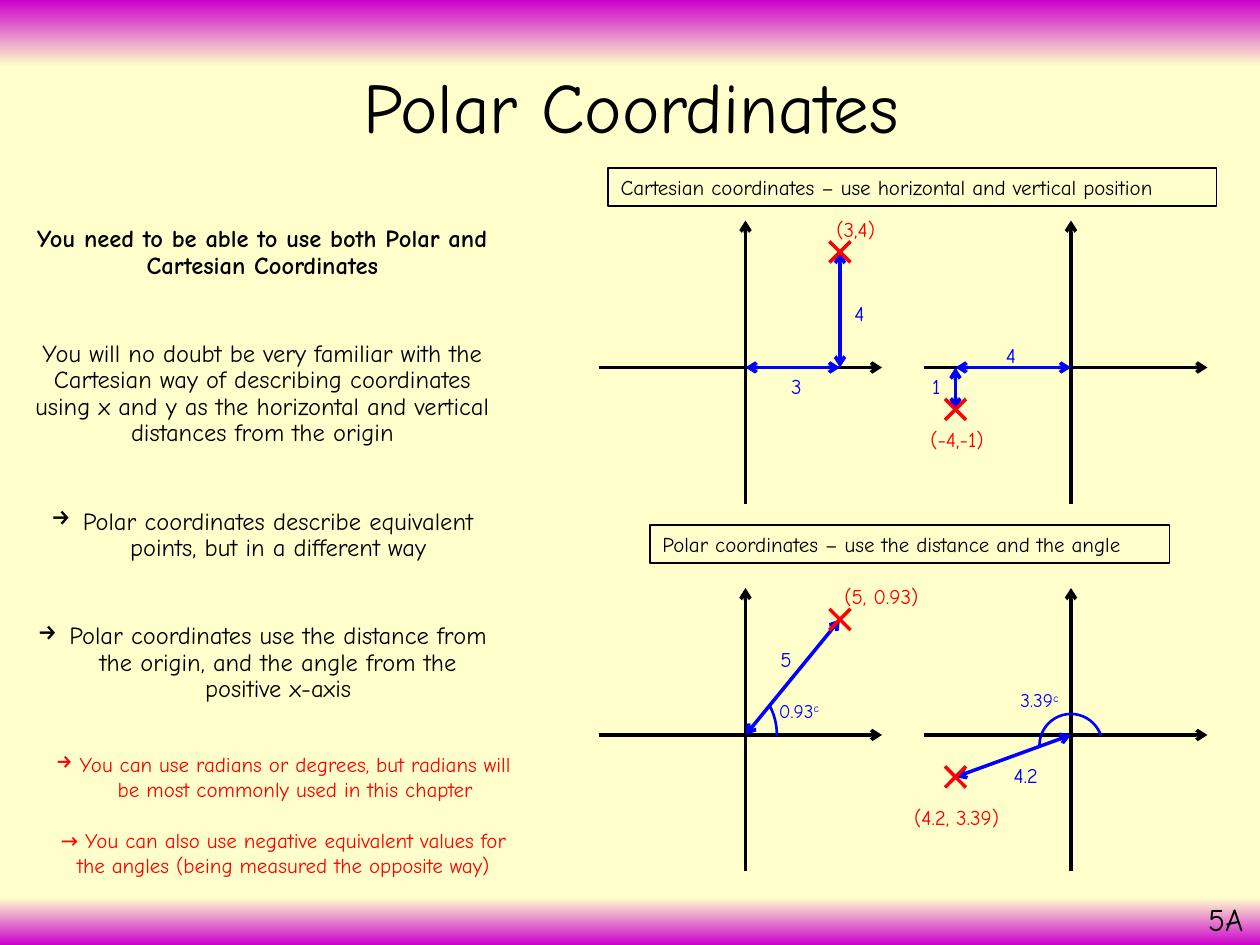
from copy import deepcopy
from pptx import Presentation
from pptx.dml.color import RGBColor
from pptx.enum.shapes import MSO_CONNECTOR as Link, MSO_SHAPE as Kind
from pptx.enum.text import MSO_ANCHOR as Anchor, MSO_AUTO_SIZE as Fit, PP_ALIGN as Align
from pptx.oxml.ns import qn
from pptx.util import Pt
from lxml.etree import SubElement as Sub

BLACK = RGBColor(0x00, 0x00, 0x00)
BLUE = RGBColor(0x00, 0x00, 0xFF)
RED = RGBColor(0xFF, 0x00, 0x00)
PURPLE = RGBColor(0xCC, 0x00, 0xCC)
CREAM = RGBColor(0xFF, 0xFF, 0xCC)


class Board:
    font = "Comic Neue"
    stroke = 2

    def __init__(self, slide):
        self.slide = slide
        self.shapes = slide.shapes

    def shade(self, stops):
        """Fill the background from top to bottom."""
        fill = self.slide.background.fill
        fill.gradient()
        fill.gradient_angle = 270
        items = self.slide.element.find(".//" + qn("a:gsLst"))
        while len(items) < len(stops):
            items.append(deepcopy(items[0]))
        for stop, (place, color) in zip(fill.gradient_stops, stops):
            stop.position = place
            stop.color.rgb = color

    def run(self, para, words, size, color, bold=False, raised=False):
        run = para.add_run()
        run.text = words
        font = run.font
        font.name, font.size, font.bold = self.font, Pt(size), bold
        font.color.rgb = color
        if raised:
            font._element.set("baseline", "30000")

    def bullet(self, para, indent):
        props = para._p.get_or_add_pPr()
        props.set("marL", str(Pt(indent)))
        props.set("indent", str(-Pt(indent)))
        Sub(props, qn("a:buChar")).set("char", "→")

    def text(self, x, y, w, h, wrap=True):
        """Add an empty text box and return its frame."""
        frame = self.shapes.add_textbox(Pt(x), Pt(y), Pt(w), Pt(h)).text_frame
        frame.word_wrap = wrap
        if not wrap:
            frame.auto_size = Fit.SHAPE_TO_FIT_TEXT
        return frame

    def label(self, words, x, y, w, color, size=12, h=21.6, power=""):
        para = self.text(x, y, w, h, wrap=False).paragraphs[0]
        para.alignment = Align.LEFT if power else Align.CENTER
        self.run(para, words, size, color)
        if power:
            self.run(para, power, size, color, raised=True)

    def story(self, frame, parts, size, color, gap, lead=1.0):
        """Write (words, bold, bullet indent) paragraphs with equal gaps."""
        for i, (words, bold, indent) in enumerate(parts):
            para = frame.add_paragraph() if i else frame.paragraphs[0]
            para.alignment = Align.CENTER
            para.line_spacing = lead
            para.space_before = Pt(gap if i else 0)
            if indent:
                self.bullet(para, indent)
            self.run(para, words, size, color, bold)

    def frame(self, words, x, y, w):
        box = self.shapes.add_shape(Kind.RECTANGLE, Pt(x), Pt(y), Pt(w), Pt(21.8))
        box.shadow.inherit = False
        box.fill.background()
        box.line.color.rgb = BLACK
        box.line.width = Pt(0.75)
        box.text_frame.word_wrap = True
        box.text_frame.vertical_anchor = Anchor.MIDDLE
        para = box.text_frame.paragraphs[0]
        para.alignment = Align.LEFT
        self.run(para, words, 12, BLACK)

    def line(self, start, end, color, ends=(), home=None):
        shapes = home or self.shapes
        link = shapes.add_connector(Link.STRAIGHT, *map(Pt, start + end))
        link.line.color.rgb = color
        link.line.width = Pt(self.stroke)
        for name in ends:
            Sub(link.line._ln, qn("a:" + name)).set("type", "arrow")
        Sub(link._element.spPr, qn("a:effectLst"))

    def span(self, start, end):
        self.line(start, end, BLUE, ("headEnd", "tailEnd"))

    def axes(self, x, y):
        self.line((x - 84, y), (x + 78, y), BLACK, ("tailEnd",))
        self.line((x, y + 78), (x, y - 84), BLACK, ("tailEnd",))

    def cross(self, x, y, r=6):
        group = self.shapes.add_group_shape()
        for side in (r, -r):
            self.line((x - side, y - r), (x + side, y + r), RED, home=group.shapes)

    def arc(self, x, y, r, start, end):
        """Draw an arc about (x, y), with angles in degrees clockwise."""
        arc = self.shapes.add_shape(Kind.ARC, Pt(x - r), Pt(y - r), Pt(2 * r), Pt(2 * r))
        arc.shadow.inherit = False
        arc.fill.background()
        arc.line.color.rgb = BLUE
        arc.line.width = Pt(1.5)
        for i, angle in enumerate((start, end)):
            arc.adjustments[i] = angle * 0.6


def main():
    deck = Presentation()
    deck.slide_width, deck.slide_height = Pt(720), Pt(540)
    board = Board(deck.slides.add_slide(deck.slide_layouts[6]))
    board.shade([(0, PURPLE), (0.07, CREAM), (0.95, CREAM), (1, PURPLE)])

    # Title and page mark
    title = board.text(50.4, 24, 620.6, 78.5)
    title.vertical_anchor = Anchor.MIDDLE
    board.story(title, [("Polar Coordinates", False, 0)], 40.5, BLACK, 0, 0.9)
    board.label("5A", 681, 511, 39, BLACK, 18, 29)

    # Explanation on the left
    board.story(board.text(12, 126, 276, 372), [
        ("You need to be able to use both Polar and Cartesian Coordinates", True, 0),
        ("You will no doubt be very familiar with the Cartesian way of describing "
         "coordinates using x and y as the horizontal and vertical distances from "
         "the origin", False, 0),
        ("Polar coordinates describe equivalent points, but in a different way",
         False, 18),
        ("Polar coordinates use the distance from the origin, and the angle from "
         "the positive x-axis", False, 18),
    ], 14, BLACK, 35.2, 0.9)
    board.story(board.text(24, 426, 276, 94), [
        ("You can use radians or degrees, but radians will be most commonly used "
         "in this chapter", False, 13.5),
        ("→ You can also use negative equivalent values for the angles (being "
         "measured the opposite way)", False, 0),
    ], 12, RED, 14.4)

    # Headings of the two rows
    board.frame("Cartesian coordinates – use horizontal and vertical position",
                347.5, 96, 347.5)
    board.frame("Polar coordinates – use the distance and the angle", 371.5, 300, 297)

    # Axes, arrows and points: the same two points in both rows
    left, right = 426, 612
    for y in (210, 420):
        board.axes(left, y)
        board.axes(right, y)
        high, low = (left + 54, y - 66), (right - 66, y + 24)
        if y == 210:
            for x, point in ((left, high), (right, low)):
                foot = (point[0], y)
                board.span((x, y), foot)
                board.span(foot, point)
        else:
            board.span((left, y), high)
            board.span((right, y), low)
        board.cross(*high)
        board.cross(*low)

    # Angles
    board.arc(408, 420, 36, 331.66, 1.34)
    board.arc(612, 426, 18, 176.56, 341.79)
    board.label("0.93", 438, 396, 42, BLUE, 11, 20.9, "c")
    board.label("3.39", 576, 390, 42, BLUE, 11, 20.9, "c")

    # Labels of points and lengths
    for words, x, y, w, color in (
        ("(3,4)", 468, 120, 42, RED),
        ("(-4,-1)", 522, 240, 49.7, RED),
        ("(5, 0.93)", 472, 330, 63.4, RED),
        ("(4.2, 3.39)", 510, 456, 73.4, RED),
        ("3", 444, 210, 22.3, BLUE),
        ("4", 480, 168, 22.3, BLUE),
        ("4", 566.5, 192, 22.3, BLUE),
        ("1", 525, 210, 20, BLUE),
        ("5", 438, 366, 22.3, BLUE),
        ("4.2", 570, 432, 32.4, BLUE),
    ):
        board.label(words, x, y, w, color)

    deck.save("out.pptx")


if __name__ == "__main__":
    main()
